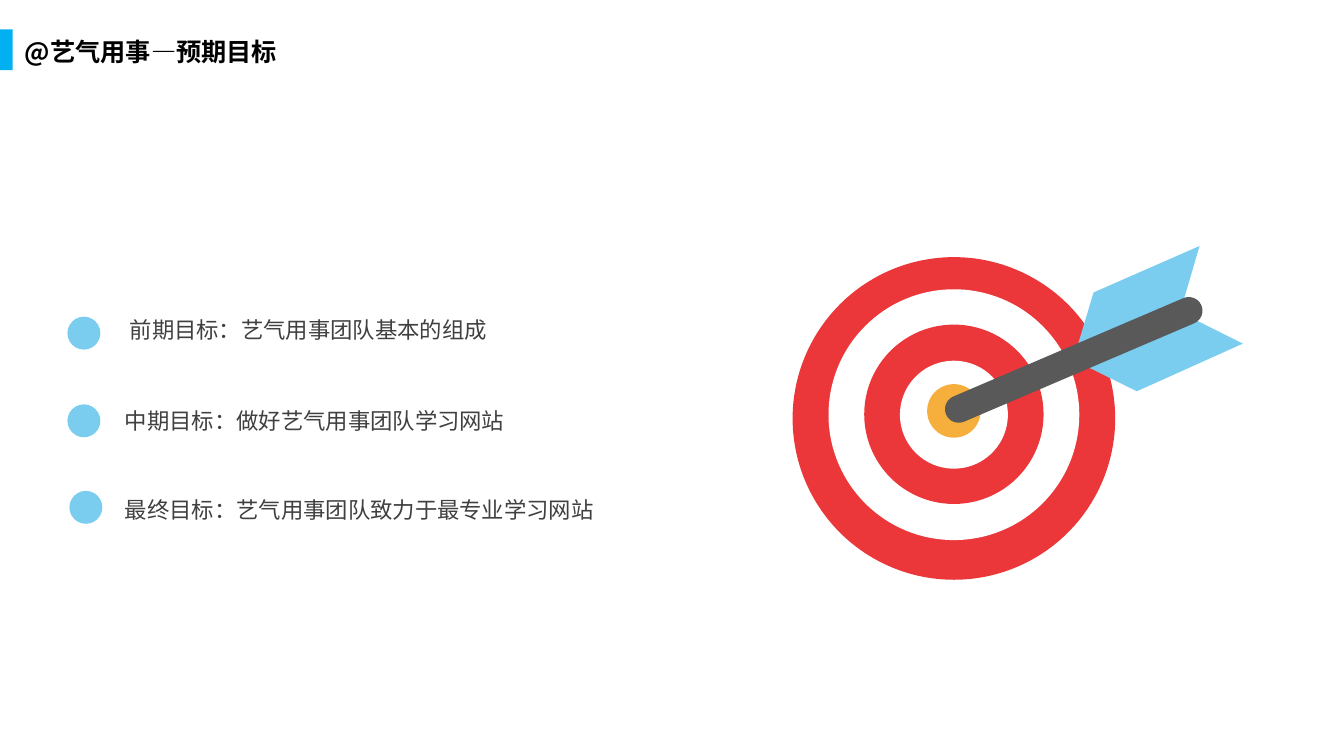
from math import atan2, degrees, hypot

from pptx import Presentation
from pptx.dml.color import RGBColor
from pptx.enum.shapes import MSO_SHAPE
from pptx.enum.text import MSO_ANCHOR
from pptx.oxml.ns import qn
from pptx.util import Cm, Pt

FONT = "Noto Sans CJK SC"
BLACK = RGBColor(0x00, 0x00, 0x00)
DARK_GREY = RGBColor(0x40, 0x40, 0x40)
SHAFT_GREY = RGBColor(0x59, 0x59, 0x59)
WHITE = RGBColor(0xFF, 0xFF, 0xFF)
RED = RGBColor(0xEB, 0x37, 0x3A)
GOLD = RGBColor(0xF6, 0xAE, 0x3C)
SKY = RGBColor(0x7A, 0xCD, 0xEF)
ACCENT = RGBColor(0x00, 0xB0, 0xF0)

# All lengths are in centimetres.
TITLE = "@艺气用事—预期目标"
GOALS = [  # text, (text left, top), (dot left, top)
    ("前期目标：艺气用事团队基本的组成", (3.02, 7.85), (1.7, 7.98)),
    ("中期目标：做好艺气用事团队学习网站", (2.9, 10.13), (1.7, 10.19)),
    ("最终目标：艺气用事团队致力于最专业学习网站", (2.9, 12.37), (1.75, 12.37)),
]
DOT = 0.83
TARGET_X = 24.04
RINGS = [  # diameter, top, colour
    (9.93, 5.49, WHITE),
    (8.13, 6.48, RED),
    (6.32, 7.29, WHITE),
    (4.52, 8.18, RED),
    (2.72, 9.09, WHITE),
    (1.35, 9.68, GOLD),
]
FEATHERS = [
    [(27.05, 9.07), (27.56, 7.37), (30.23, 6.2), (29.74, 7.87)],
    [(27.05, 9.07), (28.65, 9.86), (31.32, 8.66), (29.74, 7.87)],
]
SHAFT_TIP, SHAFT_END, SHAFT_WIDTH = (24.16, 10.31), (29.96, 7.83), 0.69


def paint(sp, color):
    sp.fill.solid()
    sp.fill.fore_color.rgb = color
    sp.line.fill.background()
    sp.shadow.inherit = False
    return sp


def add_solid(shapes, kind, x, y, w, h, color):
    return paint(shapes.add_shape(kind, Cm(x), Cm(y), Cm(w), Cm(h)), color)


def add_text(shapes, text, x, y, w, h, *, size, color, bold=False):
    tf = shapes.add_textbox(Cm(x), Cm(y), Cm(w), Cm(h)).text_frame
    tf.word_wrap = True
    tf.vertical_anchor = MSO_ANCHOR.TOP
    r = tf.paragraphs[0].add_run()
    r.text = text
    r.font.name = FONT
    r.font.size = Pt(size)
    r.font.bold = bold
    r.font.color.rgb = color
    east_asian = r.font._element.makeelement(qn("a:ea"), {"typeface": FONT})
    r.font._element.append(east_asian)


def add_target(shapes):
    for diameter, top, color in RINGS:
        add_solid(shapes, MSO_SHAPE.OVAL, TARGET_X - diameter / 2, top,
                  diameter, diameter, color)


def add_arrow(shapes):
    for points in FEATHERS:
        start, *rest = [(Cm(x), Cm(y)) for x, y in points]
        builder = shapes.build_freeform(*start)
        builder.add_line_segments(rest, close=True)
        paint(builder.convert_to_shape(), SKY)

    (x1, y1), (x2, y2) = SHAFT_TIP, SHAFT_END
    length = hypot(x2 - x1, y2 - y1) + SHAFT_WIDTH
    shaft = add_solid(shapes, MSO_SHAPE.ROUNDED_RECTANGLE,
                      (x1 + x2 - length) / 2, (y1 + y2 - SHAFT_WIDTH) / 2,
                      length, SHAFT_WIDTH, SHAFT_GREY)
    shaft.adjustments[0] = 0.5
    shaft.rotation = degrees(atan2(y2 - y1, x2 - x1))


def main():
    prs = Presentation()
    prs.slide_width, prs.slide_height = Cm(33.87), Cm(19.05)
    s = prs.slides.add_slide(prs.slide_layouts[6])

    add_text(s.shapes, TITLE, 0.38, 0.79, 7.34, 1.02,
             size=18, color=BLACK, bold=True)
    add_solid(s.shapes, MSO_SHAPE.RECTANGLE, 0, 0.74, 0.32, 1.03, ACCENT)

    target = s.shapes.add_group_shape().shapes
    add_target(target)
    add_arrow(target)

    for text, text_at, dot_at in GOALS:
        goal = s.shapes.add_group_shape().shapes
        add_solid(goal, MSO_SHAPE.OVAL, *dot_at, DOT, DOT, SKY)
        add_text(goal, text, *text_at, 13.46, 0.94, size=16, color=DARK_GREY)

    prs.save("out.pptx")


if __name__ == "__main__":
    main()
